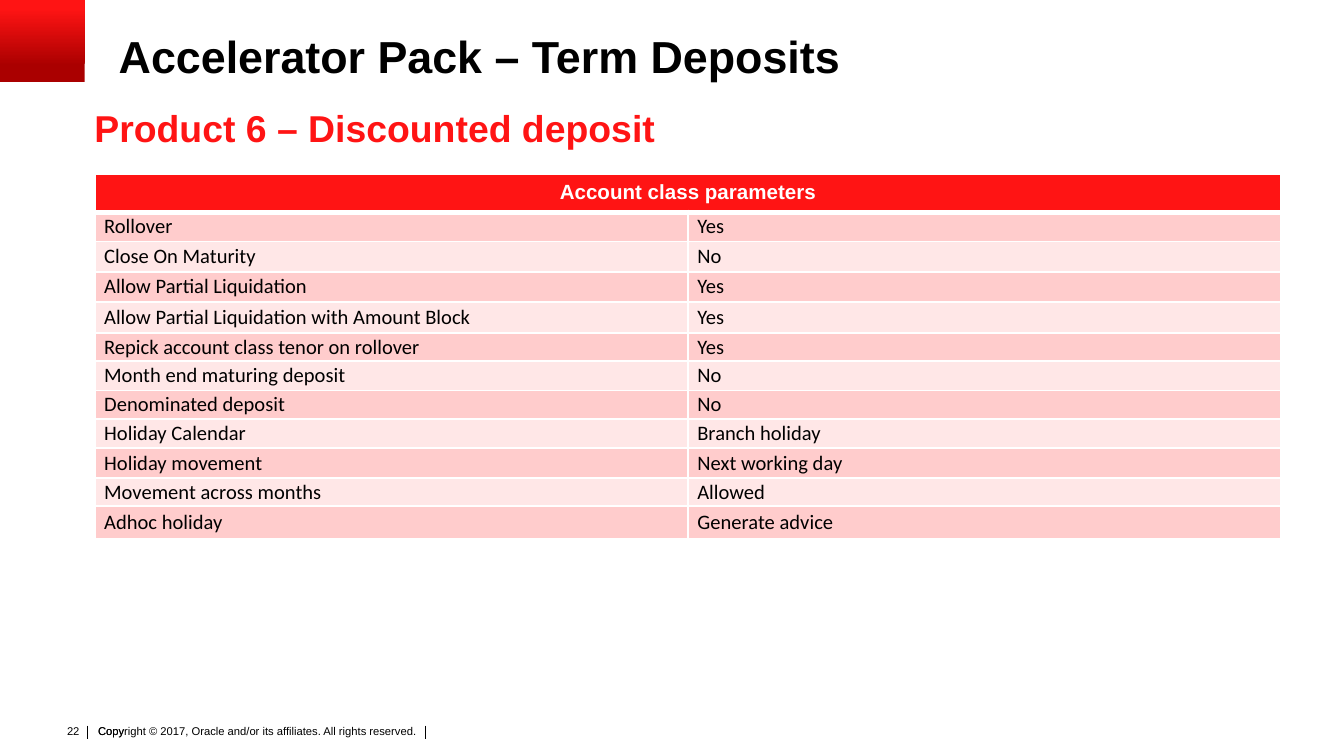
from lxml import etree
from pptx import Presentation
from pptx.dml.color import RGBColor
from pptx.enum.shapes import MSO_CONNECTOR as Connector, MSO_SHAPE as Shape
from pptx.enum.text import MSO_ANCHOR as Anchor, PP_ALIGN as Align
from pptx.oxml.ns import qn
from pptx.util import Pt

RED, BLACK, WHITE = "FF1414", "000000", "FFFFFF"
BANDS = ["FFCCCC", "FFE7E7"]


def color(value):
    return RGBColor.from_string(value)


def write(frame, text, size=11, font="Arial", ink=BLACK, bold=False, align=Align.LEFT,
          anchor=Anchor.TOP, margins=(0, 0), spacing=None, after=0, wrap=True):
    """Fill a text frame or table cell; margins are (horizontal, vertical)."""
    across, down = margins
    frame.margin_left = frame.margin_right = Pt(across)
    frame.margin_top = frame.margin_bottom = Pt(down)
    frame.vertical_anchor = anchor
    body = getattr(frame, "text_frame", frame)
    if body is frame:
        frame.word_wrap = wrap
    para = body.paragraphs[0]
    para.alignment, para.line_spacing, para.space_after = align, spacing, Pt(after)
    span = para.add_run()
    span.text = text
    span.font.size, span.font.name, span.font.bold = Pt(size), font, bold
    span.font.color.rgb = color(ink)


deck = Presentation()
deck.slide_width, deck.slide_height = Pt(720), Pt(405)
page = deck.slides.add_slide(deck.slide_layouts[6])
shapes = page.shapes

# Footer
for text in ["Copyright © 2017, Oracle and/or its affiliates. All rights reserved.", "Copy"]:
    box = shapes.add_textbox(Pt(49.7), Pt(386.6), Pt(197.3), Pt(17.3))
    write(box.text_frame, text, size=6, margins=(2.9, 1.4))
for x in [47, 228]:
    divider = shapes.add_connector(Connector.STRAIGHT, Pt(x), Pt(388.8), Pt(x), Pt(396))
    divider.line.color.rgb = color(BLACK)
    divider.line.width = Pt(0.5)
    etree.SubElement(divider._element.spPr, qn("a:effectLst"))
number = shapes.add_textbox(Pt(28.1), Pt(384.5), Pt(21.6), Pt(14.4))
write(number.text_frame, "22", size=6, align=Align.RIGHT, margins=(7.2, 3.6), wrap=False)

# Corner block
corner = shapes.add_shape(Shape.RECTANGLE, 0, 0, Pt(45.4), Pt(43.9))
corner.shadow.inherit = False
corner.line.fill.background()
corner.fill.gradient()
corner.fill.gradient_angle = 90
for stop, position, shade in zip(corner.fill.gradient_stops, [0.2, 0.9], ["AA0000", RED]):
    stop.position = position
    stop.color.rgb = color(shade)

# Headings
title = shapes.add_textbox(Pt(63.6), Pt(19.4), Pt(648), Pt(24.5))
write(title.text_frame, "Accelerator Pack – Term Deposits", size=24, bold=True,
      anchor=Anchor.MIDDLE, spacing=0.9)
subtitle = shapes.add_textbox(Pt(50.6), Pt(55.4), Pt(648), Pt(25.9))
write(subtitle.text_frame, "Product 6 – Discounted deposit", size=20, bold=True, ink=RED,
      anchor=Anchor.MIDDLE)

# Parameter table
parameters = [
    ("Rollover", "Yes", 15.8),
    ("Close On Maturity", "No", 16.2),
    ("Allow Partial Liquidation", "Yes", 16.2),
    ("Allow Partial Liquidation with Amount Block", "Yes", 16.6),
    ("Repick account class tenor on rollover", "Yes", 15.1),
    ("Month end maturing deposit", "No", 15.8),
    ("Denominated deposit", "No", 15.1),
    ("Holiday Calendar", "Branch holiday", 15.8),
    ("Holiday movement", "Next working day", 16),
    ("Movement across months", "Allowed", 15),
    ("Adhoc holiday", "Generate advice", 17.6),
]
header_height = 19.8
table_height = header_height + sum(height for _, _, height in parameters)
table = shapes.add_table(len(parameters) + 1, 2, Pt(50.8), Pt(93.2), Pt(635.6),
                         Pt(table_height)).table
table.first_row = table.horz_banding = False
for column in table.columns:
    column.width = Pt(317.8)

table.rows[0].height = Pt(header_height)
table.cell(0, 0).merge(table.cell(0, 1))
write(table.cell(0, 0), "Account class parameters", ink=WHITE, bold=True,
      align=Align.CENTER, margins=(7.2, 3.6))
for row, (name, value, height) in enumerate(parameters, start=1):
    table.rows[row].height = Pt(height)
    for column, text in enumerate([name, value]):
        write(table.cell(row, column), text, font="Calibri", anchor=Anchor.MIDDLE,
              margins=(5, 0), after=10)

for row in range(len(parameters) + 1):
    for column in range(2):
        cell = table.cell(row, column)
        cell.fill.solid()
        cell.fill.fore_color.rgb = color(BANDS[(row - 1) % 2] if row else RED)
        properties = cell._tc.get_or_add_tcPr()
        for place, side in enumerate(["lnL", "lnR", "lnT", "lnB"]):
            under_header = (row, side) in [(0, "lnB"), (1, "lnT")]
            border = etree.Element(qn(f"a:{side}"), w=str(Pt(3 if under_header else 1)))
            fill = etree.SubElement(border, qn("a:solidFill"))
            etree.SubElement(fill, qn("a:srgbClr"), val=WHITE)
            properties.insert(place, border)

deck.save("out.pptx")
